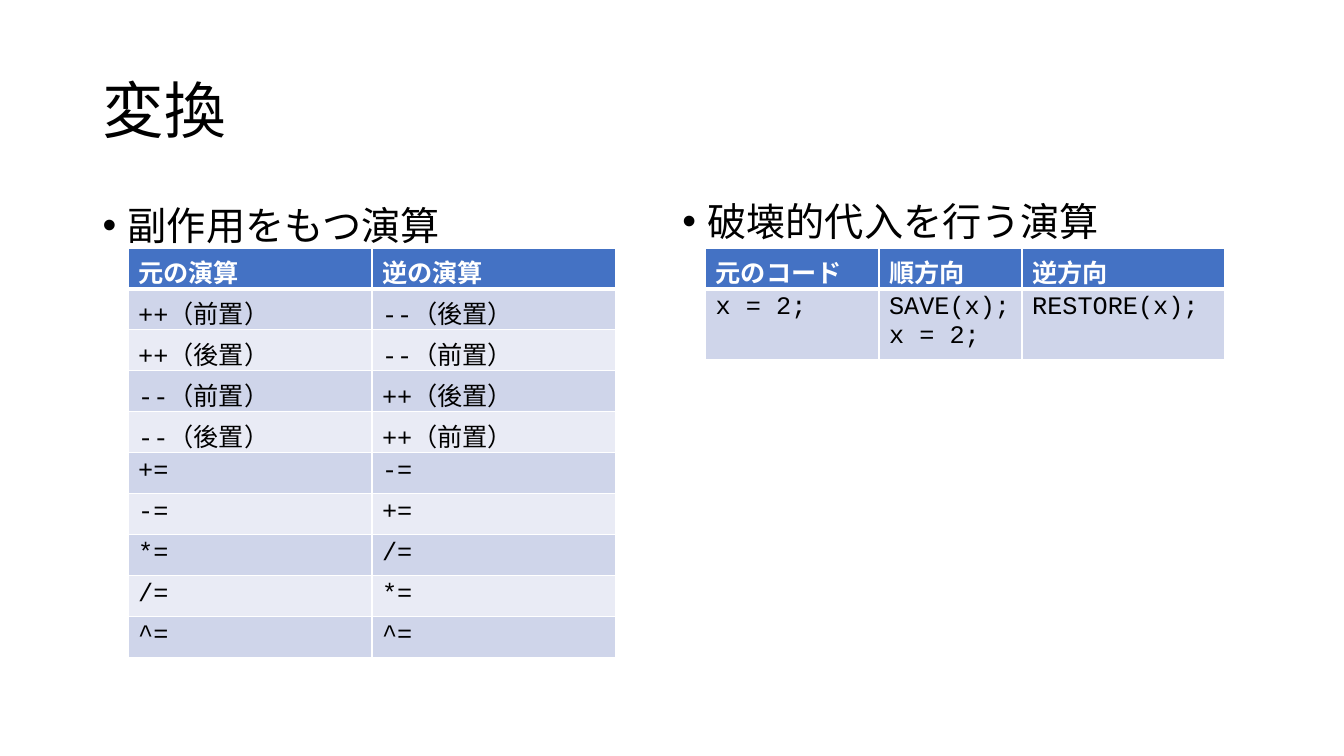
from dataclasses import dataclass

from lxml.etree import SubElement
from pptx import Presentation
from pptx.dml.color import RGBColor
from pptx.enum.text import MSO_ANCHOR as Anchor, PP_ALIGN as Align
from pptx.oxml.ns import qn
from pptx.util import Inches, Pt

SLIDE_WIDTH, SLIDE_HEIGHT = Inches(13.33), Inches(7.5)
TITLE_ONLY = 5


@dataclass(frozen=True)
class Theme:
    text_font: str = "Noto Sans CJK JP"
    code_font: str = "Courier New"
    black: str = "000000"
    white: str = "FFFFFF"
    header: str = "4472C4"
    bands: tuple = ("CFD5EA", "E9EBF5")
    title_size: int = 44
    bullet_size: int = 28
    table_size: int = 18
    rule: int = 1
    header_rule: int = 3


THEME = Theme()

OPERATIONS = [
    ("元の演算", "逆の演算"),
    ("++（前置）", "--（後置）"),
    ("++（後置）", "--（前置）"),
    ("--（前置）", "++（後置）"),
    ("--（後置）", "++（前置）"),
    ("+=", "-="),
    ("-=", "+="),
    ("*=", "/="),
    ("/=", "*="),
    ("^=", "^="),
]
ASSIGNMENTS = [
    ("元のコード", "順方向", "逆方向"),
    ("x = 2;", "SAVE(x);\nx = 2;", "RESTORE(x);"),
]


def across(percent):
    return round(SLIDE_WIDTH * percent / 100)


def down(percent):
    return round(SLIDE_HEIGHT * percent / 100)


def add_run(paragraph, text, size, color=THEME.black, font=THEME.text_font, bold=False):
    run = paragraph.add_run()
    run.text = text
    run.font.size = Pt(size)
    run.font.bold = bold
    run.font.color.rgb = RGBColor.from_string(color)
    run.font.name = font
    SubElement(run._r.get_or_add_rPr(), qn("a:ea"), typeface=THEME.text_font)


def add_title(slide, text):
    title = slide.shapes.title
    title.left, title.top = across(6.9), down(5.33)
    title.width, title.height = across(86.25), down(19.33)
    frame = title.text_frame
    frame.word_wrap = True
    frame.vertical_anchor = Anchor.MIDDLE
    paragraph = frame.paragraphs[0]
    paragraph.alignment = Align.LEFT
    paragraph.line_spacing = 0.9
    add_run(paragraph, text, THEME.title_size)


def add_bullet(slide, text, left, top):
    box = slide.shapes.add_textbox(across(left), down(top), across(46.73), down(63.47))
    box.text_frame.word_wrap = True
    paragraph = box.text_frame.paragraphs[0]
    paragraph.line_spacing = 0.9
    paragraph.space_before = Pt(10)
    properties = paragraph._p.get_or_add_pPr()
    properties.set("marL", str(Inches(0.25)))
    properties.set("indent", str(Inches(-0.25)))
    SubElement(properties, qn("a:buFont"), typeface="Arial")
    SubElement(properties, qn("a:buChar"), char="•")
    add_run(paragraph, text, THEME.bullet_size)


def add_borders(cell, top, bottom):
    properties = cell._tc.get_or_add_tcPr()
    widths = {"lnL": THEME.rule, "lnR": THEME.rule, "lnT": top, "lnB": bottom}
    for side, width in widths.items():
        line = SubElement(properties, qn(f"a:{side}"), w=str(Pt(width)))
        fill = SubElement(line, qn("a:solidFill"))
        SubElement(fill, qn("a:srgbClr"), val=THEME.white)


def fill_cell(cell, text, row):
    is_header = row == 0
    add_borders(
        cell,
        top=THEME.header_rule if row == 1 else THEME.rule,
        bottom=THEME.header_rule if is_header else THEME.rule,
    )
    cell.fill.solid()
    background = THEME.header if is_header else THEME.bands[(row - 1) % 2]
    cell.fill.fore_color.rgb = RGBColor.from_string(background)
    frame = cell.text_frame
    for index, line in enumerate(text.split("\n")):
        paragraph = frame.add_paragraph() if index else frame.paragraphs[0]
        if is_header:
            add_run(paragraph, line, THEME.table_size, THEME.white, bold=True)
        else:
            add_run(paragraph, line, THEME.table_size, font=THEME.code_font)


def add_table(slide, rows, left, column_widths):
    row_height = 5.42
    table = slide.shapes.add_table(
        len(rows), len(column_widths), across(left), down(32.8),
        across(sum(column_widths)), down(row_height * len(rows)),
    ).table
    for column, width in zip(table.columns, column_widths):
        column.width = across(width)
    for row, texts in enumerate(rows):
        table.rows[row].height = down(row_height)
        for column, text in enumerate(texts):
            fill_cell(table.cell(row, column), text, row)


def main():
    presentation = Presentation()
    presentation.slide_width, presentation.slide_height = SLIDE_WIDTH, SLIDE_HEIGHT
    slide = presentation.slides.add_slide(presentation.slide_layouts[TITLE_ONLY])
    add_title(slide, "変換")
    add_bullet(slide, "副作用をもつ演算", left=6.9, top=26.67)
    add_table(slide, OPERATIONS, left=9.53, column_widths=(18.15, 18.15))
    add_bullet(slide, "破壊的代入を行う演算", left=50.03, top=26.13)
    add_table(slide, ASSIGNMENTS, left=52.5, column_widths=(12.9, 10.65, 15.08))
    presentation.save("out.pptx")


if __name__ == "__main__":
    main()
